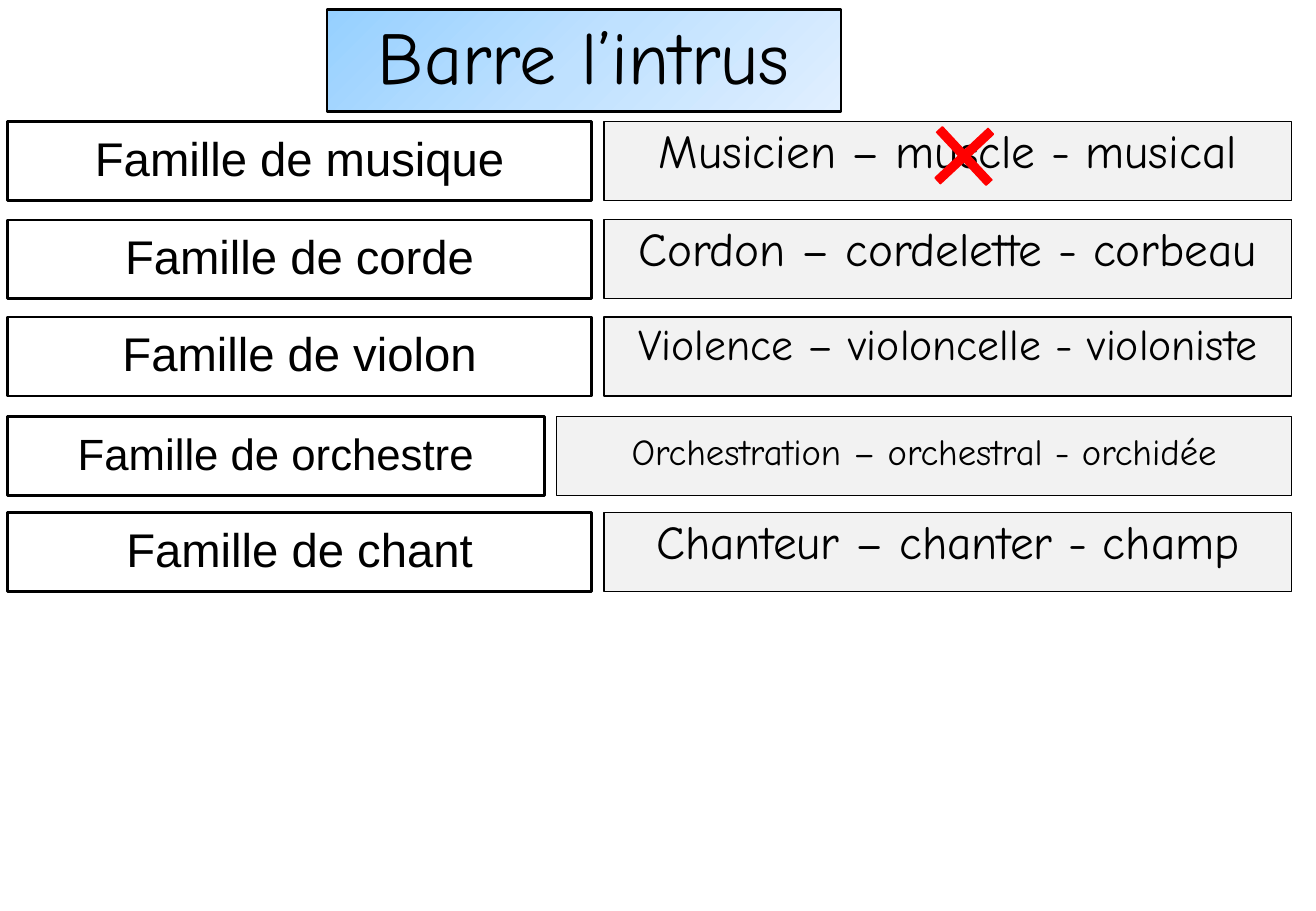
from copy import deepcopy

from pptx import Presentation
from pptx.dml.color import RGBColor
from pptx.enum.shapes import MSO_SHAPE as SHAPE
from pptx.enum.text import MSO_ANCHOR as ANCHOR, PP_ALIGN as ALIGN
from pptx.oxml.ns import qn
from pptx.util import Inches, Pt

# Content
TITLE = "Barre l’intrus"
GRADIENT = [(0, "96D0FF"), (0.5, "BFE1FF"), (1, "E0EFFF")]
NORMAL = dict(split=4.87, family_size=28, words_size=28)
TIGHT = dict(NORMAL, words_size=25.9)
WIDE = dict(split=4.48, family_size=25.9, words_size=21.7,
            spacing=0.7, anchor=ANCHOR.MIDDLE)
ROWS = [  # top, family, words, format
    (1.00, "musique", "Musicien – muscle - musical", NORMAL),
    (1.81, "corde", "Cordon – cordelette - corbeau", NORMAL),
    (2.61, "violon", "Violence – violoncelle - violoniste", TIGHT),
    (3.43, "orchestre", "Orchestration – orchestral - orchidée", WIDE),
    (4.22, "chant", "Chanteur – chanter - champ", NORMAL),
]

# Grid, in inches
WIDTH, HEIGHT = 10.83, 7.5
LEFT, RIGHT, GAP, ROW_HEIGHT = 0.06, 10.63, 0.1, 0.65


def color(value):
    return RGBColor.from_string(value)


def add_box(x, y, w, h, fill=None, line="000000", weight=1.5, kind=SHAPE.RECTANGLE):
    sp = slide.shapes.add_shape(kind, *map(Inches, (x, y, w, h)))
    sp.shadow.inherit = False
    if fill:
        sp.fill.solid()
        sp.fill.fore_color.rgb = color(fill)
    else:
        sp.fill.background()
    sp.line.color.rgb = color(line)
    sp.line.width = Pt(weight)
    return sp


def write(sp, text, size=28, font="Comic Neue", anchor=ANCHOR.MIDDLE,
          spacing=0.9, before=10):
    tf = sp.text_frame
    tf.word_wrap = True
    tf.vertical_anchor = anchor
    p = tf.paragraphs[0]
    p.alignment = ALIGN.CENTER
    p.line_spacing = spacing
    p.space_before = Pt(before)
    r = p.add_run()
    r.text = text
    r.font.size = Pt(size)
    r.font.name = font
    r.font.color.rgb = color("000000")


def fill_gradient(sp, stops):
    sp.fill.gradient()
    sp.fill.gradient_angle = 315  # towards the lower right
    stop_list = sp._element.spPr.find(qn("a:gradFill")).find(qn("a:gsLst"))
    while len(stop_list) < len(stops):
        stop_list.append(deepcopy(stop_list[0]))
    for stop, (position, shade) in zip(sp.fill.gradient_stops, stops):
        stop.position = position
        stop.color.rgb = color(shade)


prs = Presentation()
prs.slide_width, prs.slide_height = Inches(WIDTH), Inches(HEIGHT)
slide = prs.slides.add_slide(prs.slide_layouts[6])

# Title
title = add_box(2.69, 0.08, 4.23, 0.84)
fill_gradient(title, GRADIENT)
write(title, TITLE, size=44, before=0)

# Word families and their words
for top, family, words, fmt in ROWS:
    split = fmt["split"]
    sp = add_box(LEFT, top, split - LEFT, ROW_HEIGHT)
    write(sp, f"Famille de {family}", size=fmt["family_size"], font="Arial")
    start = split + GAP
    sp = add_box(start, top, RIGHT - start, ROW_HEIGHT, fill="F2F2F2", weight=0.75)
    write(sp, words, size=fmt["words_size"], spacing=fmt.get("spacing", 0.9),
          anchor=fmt.get("anchor", ANCHOR.TOP))

# Cross over the odd word of the example
cross = add_box(7.53, 0.88, 0.81, 0.81, fill="FF0000", line="FF0000", weight=1,
                kind=SHAPE.MATH_PLUS)
cross.adjustments[0] = 0.079
cross.rotation = 47

prs.save("out.pptx")
